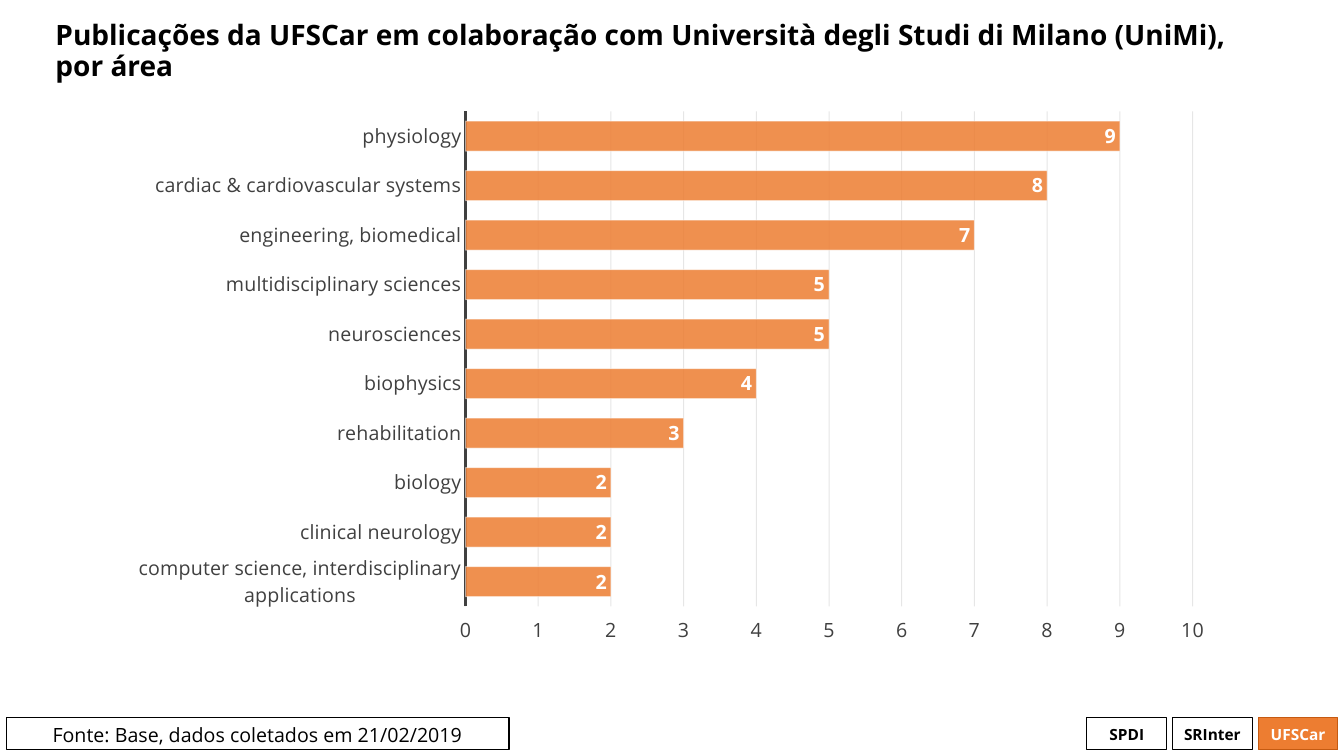
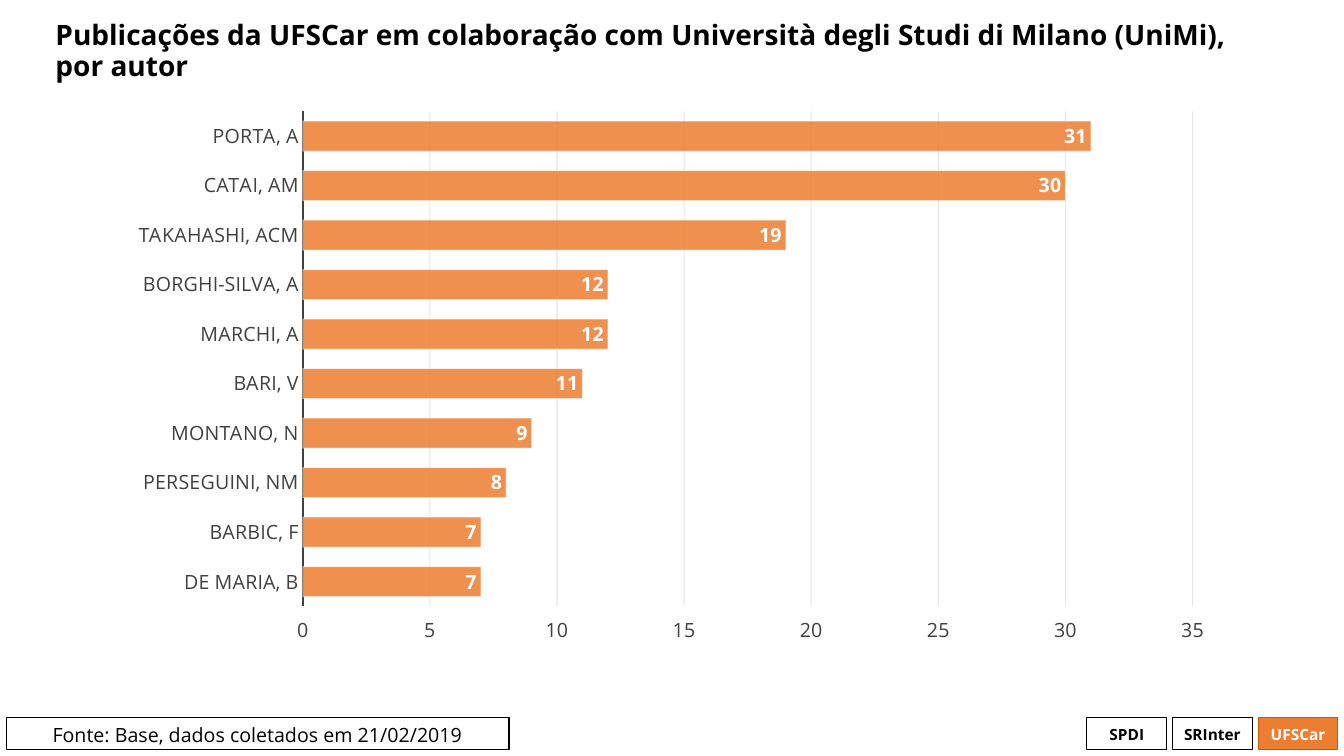
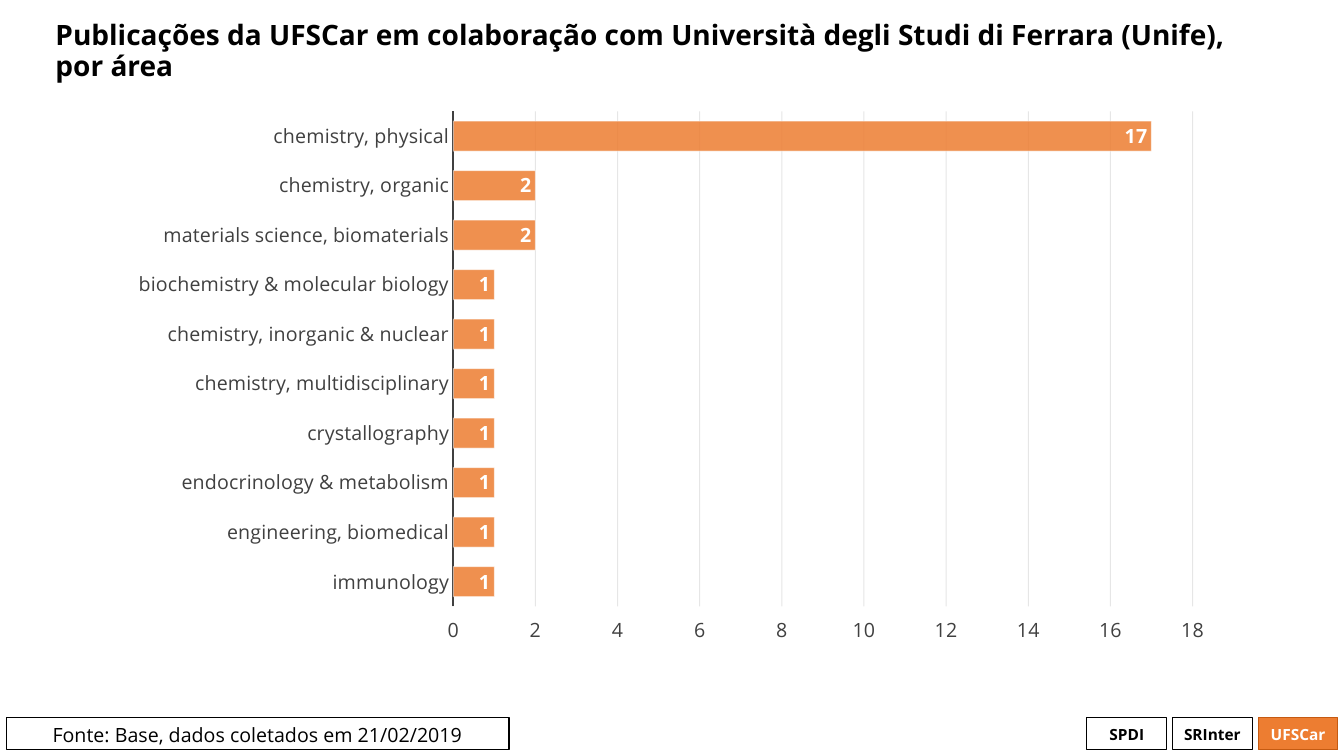
import pptx
import pptx.chart.data
import pptx.dml.color
import pptx.enum.chart
import pptx.enum.shapes
import pptx.enum.text
import pptx.oxml
import pptx.oxml.ns
import pptx.util

Inches = pptx.util.Inches
Pt = pptx.util.Pt
qn = pptx.oxml.ns.qn
ALIGN = pptx.enum.text.PP_ALIGN
ANCHOR = pptx.enum.text.MSO_ANCHOR

COLORS = {
    "black": "000000", "white": "FFFFFF", "orange": "ED7D31",
    "rust": "C55A11", "axis": "404040", "grid": "0D0D0D",
}
FONTS = {
    "title": {"name": "Open Sans", "size": Pt(20), "bold": True},
    "badge": {"name": "Open Sans", "size": Pt(11), "bold": True},
    "body": {"name": "Open Sans", "size": Pt(14), "bold": False},
    "value": {"name": "Open Sans", "size": Pt(14), "bold": True},
}


def style_font(font, role, color):
    for attribute, value in FONTS[role].items():
        setattr(font, attribute, value)
    font.color.rgb = pptx.dml.color.RGBColor.from_string(COLORS[color])


def paint(target, color, opacity=100):
    target.solid()
    target.fore_color.rgb = pptx.dml.color.RGBColor.from_string(COLORS[color])
    if opacity < 100:
        for tint in target._xPr.iter(qn("a:srgbClr")):
            if tint.getparent().getparent() is target._xPr:
                alpha = tint.makeelement(qn("a:alpha"), {"val": str(opacity * 1000)})
                tint.append(alpha)


WIDTH, HEIGHT = 40 / 3, 7.5
MARGIN = 0.06
BADGE_WIDTH, FOOTER_HEIGHT = 0.79, 0.32
FOOTER_TOP = HEIGHT - MARGIN - FOOTER_HEIGHT

MILAN = "Publicações da UFSCar em colaboração com Università degli Studi di Milano (UniMi),"
FERRARA = "Publicações da UFSCar em colaboração com Università degli Studi di Ferrara (Unife),"
RANKINGS = [
    (MILAN, "por área", 10, 1, {
        "physiology": 9, "cardiac & cardiovascular systems": 8,
        "engineering, biomedical": 7, "multidisciplinary sciences": 5,
        "neurosciences": 5, "biophysics": 4, "rehabilitation": 3, "biology": 2,
        "clinical neurology": 2,
        "computer science, interdisciplinary applications": 2,
    }),
    (MILAN, "por autor", 35, 5, {
        "PORTA, A": 31, "CATAI, AM": 30, "TAKAHASHI, ACM": 19,
        "BORGHI-SILVA, A": 12, "MARCHI, A": 12, "BARI, V": 11, "MONTANO, N": 9,
        "PERSEGUINI, NM": 8, "BARBIC, F": 7, "DE MARIA, B": 7,
    }),
    (FERRARA, "por área", 18, 2, {
        "chemistry, physical": 17, "chemistry, organic": 2,
        "materials science, biomaterials": 2,
        "biochemistry & molecular biology": 1,
        "chemistry, inorganic & nuclear": 1, "chemistry, multidisciplinary": 1,
        "crystallography": 1, "endocrinology & metabolism": 1,
        "engineering, biomedical": 1, "immunology": 1,
    }),
]

deck = pptx.Presentation()
deck.slide_width, deck.slide_height = Inches(WIDTH), Inches(HEIGHT)
layout = deck.slide_layouts.get_by_name("Title Only")
slides = [deck.slides.add_slide(layout) for ranking in RANKINGS]

footer = [
    (WIDTH - (3 - column) * (BADGE_WIDTH + MARGIN), BADGE_WIDTH, label,
     "badge", fill, line, ink, ANCHOR.MIDDLE)
    for column, (label, fill, line, ink) in enumerate([
        ("SPDI", None, "black", "black"),
        ("SRInter", None, "black", "black"),
        ("UFSCar", "orange", "rust", "white"),
    ])
]
footer.append((MARGIN, 4.99, "Fonte: Base, dados coletados em 21/02/2019",
               "body", None, "black", "black", ANCHOR.TOP))

for number, (left, width, label, role, fill, line, ink, anchor) in enumerate(footer):
    box = slides[0].shapes.add_shape(
        pptx.enum.shapes.MSO_SHAPE.RECTANGLE, Inches(left), Inches(FOOTER_TOP),
        Inches(width), Inches(FOOTER_HEIGHT))
    box.shadow.inherit = False
    if fill:
        paint(box.fill, fill)
    else:
        box.fill.background()
    paint(box.line.fill, line)
    box.line.width = Pt(0.75)
    box.text_frame.text = label
    box.text_frame.word_wrap = False
    box.text_frame.vertical_anchor = anchor
    box.text_frame.paragraphs[0].alignment = ALIGN.CENTER
    style_font(box.text_frame.paragraphs[0].runs[0].font, role, ink)
    box.element.nvSpPr.cNvPr.set("id", str(20 + number))
    layout.shapes.element.append(box.element)

for slide, (partnership, grouping, maximum, step, counts) in zip(slides, RANKINGS):
    title = slide.shapes.title
    title.left, title.top = Inches(0.45), Inches(MARGIN)
    title.width, title.height = Inches(12.41), Inches(0.91)
    title.text_frame.word_wrap = True
    title.text_frame.auto_size = pptx.enum.text.MSO_AUTO_SIZE.NONE
    title.text_frame.vertical_anchor = ANCHOR.MIDDLE
    heading = title.text_frame.paragraphs[0]
    heading.alignment = ALIGN.LEFT
    heading.line_spacing = 0.9
    heading.add_run().text = partnership
    heading.add_line_break()
    heading.add_run().text = grouping
    for run in heading.runs:
        style_font(run.font, "title", "black")

    publications = pptx.chart.data.CategoryChartData()
    publications.categories = list(counts)
    publications.add_series("Series 1", list(counts.values()))
    chart = slide.shapes.add_chart(
        pptx.enum.chart.XL_CHART_TYPE.BAR_CLUSTERED, Inches(1.15), Inches(0.99),
        Inches(11.02), Inches(5.51), publications).chart
    chart.has_title = chart.has_legend = False
    style_font(chart.font, "body", "black")
    chart.element.find(qn("c:chart")).addnext(pptx.oxml.parse_xml(
        f'<c:spPr {pptx.oxml.ns.nsdecls("c", "a")}>'
        f'<a:solidFill><a:srgbClr val="{COLORS["white"]}"/></a:solidFill>'
        f'<a:ln w="9525"><a:solidFill><a:srgbClr val="{COLORS["white"]}"/>'
        '</a:solidFill></a:ln></c:spPr>'))

    for axis in (chart.category_axis, chart.value_axis):
        axis.major_tick_mark = axis.minor_tick_mark = pptx.enum.chart.XL_TICK_MARK.NONE
        style_font(axis.tick_labels.font, "body", "axis")
    names, scale = chart.category_axis, chart.value_axis
    names.reverse_order = True
    paint(names.format.line.fill, "axis")
    names.format.line.width = Pt(1.5)
    scale.tick_label_position = pptx.enum.chart.XL_TICK_LABEL_POSITION.HIGH
    scale.minimum_scale, scale.maximum_scale, scale.major_unit = 0, maximum, step
    scale.format.line.fill.background()
    scale.has_major_gridlines = True
    paint(scale.major_gridlines.format.line.fill, "grid", 10)
    scale.major_gridlines.format.line.width = Pt(0.75)

    plot = chart.plots[0]
    plot.gap_width = 65
    plot.vary_by_categories = False
    bars = plot.series[0]
    bars.invert_if_negative = False
    paint(bars.format.fill, "orange", 85)
    paint(bars.format.line.fill, "white", 50)
    bars.format.line.width = Pt(0.75)
    bars.data_labels.show_value = True
    bars.data_labels.position = pptx.enum.chart.XL_LABEL_POSITION.INSIDE_END
    style_font(bars.data_labels.font, "value", "white")

deck.save("out.pptx")
